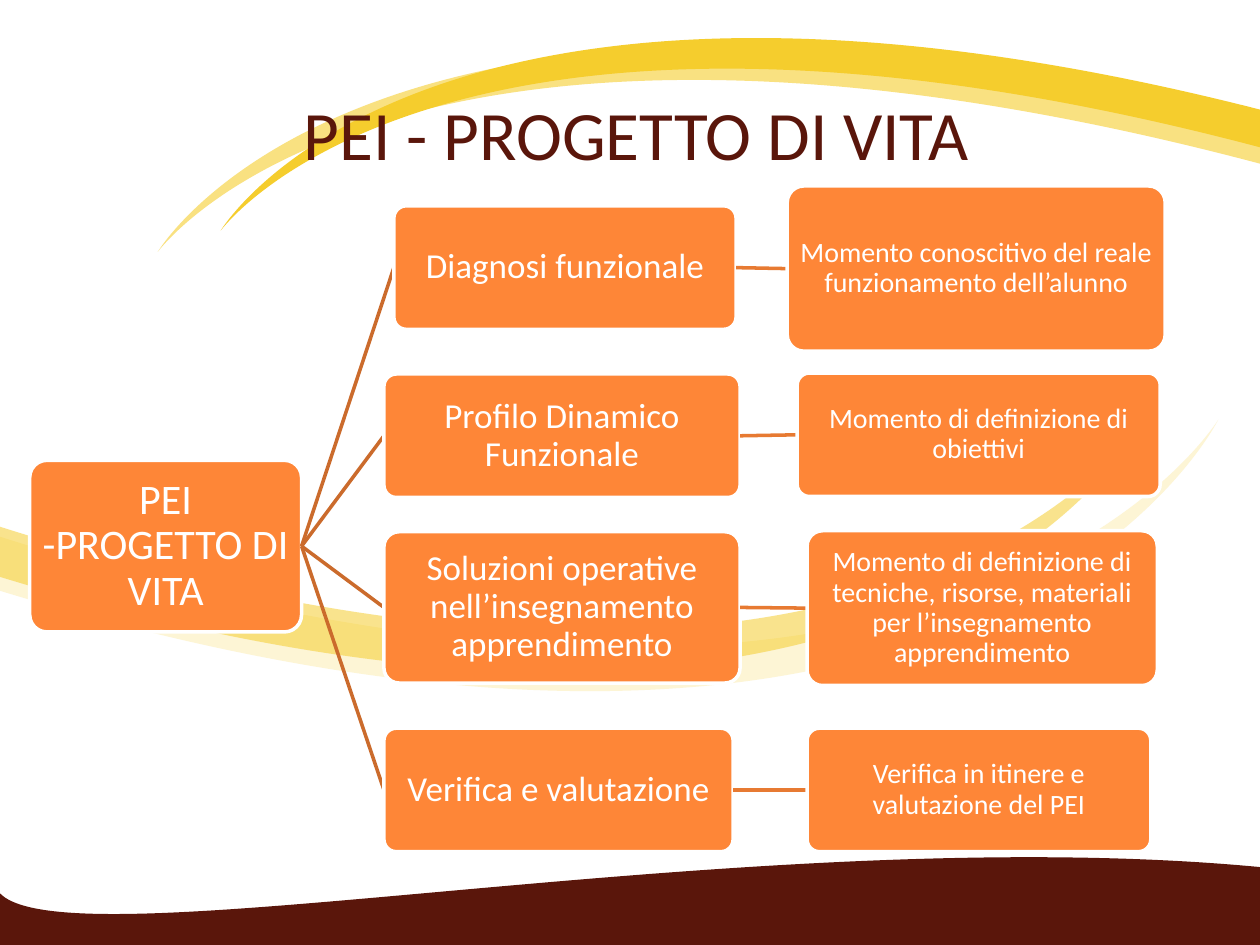
from lxml import etree
from pptx import Presentation
from pptx.dml.color import RGBColor
from pptx.enum.shapes import MSO_CONNECTOR, MSO_SHAPE
from pptx.enum.text import MSO_ANCHOR, PP_ALIGN
from pptx.oxml.ns import qn
from pptx.util import Cm, Pt

STRAIGHT = MSO_CONNECTOR.STRAIGHT
ROUNDED = MSO_SHAPE.ROUNDED_RECTANGLE
CENTER = PP_ALIGN.CENTER
MIDDLE = MSO_ANCHOR.MIDDLE
LEFT_SITE, RIGHT_SITE = 1, 3
TITLE_ONLY = 5
FONT = "Calibri"
COLORS = {
    "brown": "5A160B",
    "cream": "FDF5D5",
    "pale_yellow": "F9E181",
    "yellow": "F5CD2D",
    "orange": "FE8637",
    "branch": "CB6B2C",
    "detail_link": "E77A32",
    "white": "FFFFFF",
}
SLIDE_BOX = (0, 0, 25.4, 19.05)
TITLE_BOX = (1.4, 1.78, 22.86, 1.78)
ROOT_BOX = (0.6, 9.28, 5.48, 3.46)
ROOT_TEXT = "PEI -PROGETTO DI VITA"
STAGES = [
    ("Diagnosi funzionale", (7.94, 4.15, 6.9, 2.49),
     "Momento conoscitivo del reale funzionamento dell’alunno", (15.87, 3.75, 7.62, 3.33)),
    ("Profilo Dinamico Funzionale", (7.74, 7.54, 7.18, 2.49),
     "Momento di definizione di obiettivi", (16.07, 7.52, 7.32, 2.49)),
    ("Soluzioni operative nell’insegnamento apprendimento", (7.74, 10.72, 7.18, 3.05),
     "Momento di definizione di tecniche, risorse, materiali per l’insegnamento apprendimento",
     (16.27, 10.7, 7.06, 3.12)),
    ("Verifica e valutazione", (7.74, 14.68, 7.04, 2.49),
     "Verifica in itinere e valutazione del PEI", (16.27, 14.68, 6.93, 2.49)),
]
RIBBONS = [
    ("cream", (0, 10.82), (19.38, 16.97), (24.56, 8.46), (19.86, 17.98), (0, 11.91)),
    ("pale_yellow", (25.4, 3.3), (7.85, -1.35), (3.18, 5.08), (7.42, -2.11), (25.4, 2.46)),
    ("yellow", (25.4, 2.97), (8.86, -1.4), (4.45, 4.65), (8.46, -2.11), (25.4, 2.21)),
    ("yellow", (0, 10.62), (18.29, 16.41), (23.14, 8.38), (18.72, 17.35), (0, 11.63)),
]


def rgb(name):
    """Return the named colour."""
    return RGBColor.from_string(COLORS[name])


def bend(shape, curve_count):
    """Turn the leading line segments, three at a time, into cubic curves."""
    outline = shape._element.find(".//" + qn("a:path"))
    segments = outline.findall(qn("a:lnTo"))
    for first in range(0, 3 * curve_count, 3):
        curve = etree.Element(qn("a:cubicBezTo"))
        segments[first].addprevious(curve)
        for segment in segments[first:first + 3]:
            curve.append(segment[0])
            outline.remove(segment)


def add_outline(slide, box, points, curve_count, color):
    """Draw a filled outline that starts with the given number of curves."""
    left, top = box[:2]
    corners = [(Cm(left + x), Cm(top + y)) for x, y in points]
    builder = slide.shapes.build_freeform(*corners[0])
    builder.add_line_segments(corners[1:], close=True)
    shape = builder.convert_to_shape()
    bend(shape, curve_count)
    shape.shadow.inherit = False
    shape.fill.solid()
    shape.fill.fore_color.rgb = rgb(color)
    shape.line.fill.background()
    return shape


def add_waves(slide, box):
    """Draw the decorative hill and ribbons."""
    width, height = box[2:]
    hill = [(0, 18.01), (1.42, 19.48), (15.14, 16.51), (width, 17.48),
            (width, height), (0, height)]
    add_outline(slide, box, hill, 1, "brown")
    for color, start, outward, tip, inward, end in RIBBONS:
        points = [start, outward, tip, tip, tip, inward, end]
        ribbon = add_outline(slide, box, points, 2, color)
    solid_color = ribbon._element.spPr.find(qn("a:solidFill"))[0]
    etree.SubElement(solid_color, qn("a:alpha"), val="54000")


def format_text(shape, text, size, color):
    """Set centred text in the slide font."""
    frame = shape.text_frame
    frame.text = text
    frame.word_wrap = True
    frame.vertical_anchor = MIDDLE
    paragraph = frame.paragraphs[0]
    paragraph.alignment = CENTER
    font = paragraph.runs[0].font
    font.name = FONT
    font.size = Pt(size)
    font.color.rgb = rgb(color)
    return paragraph


def add_title(slide, box):
    """Place the title in front of the waves."""
    title = slide.shapes.title
    title.left, title.top, title.width, title.height = map(Cm, box)
    format_text(title, "PEI - PROGETTO DI VITA", 39.6, "brown")
    slide.shapes._spTree.append(title._element)


def add_node(slide, box, text, size, inset=0.03):
    """Draw one rounded box of the tree."""
    node = slide.shapes.add_shape(ROUNDED, *map(Cm, box))
    node.adjustments[0] = 0.1
    node.shadow.inherit = False
    node.fill.solid()
    node.fill.fore_color.rgb = rgb("orange")
    node.line.color.rgb = rgb("white")
    node.line.width = Pt(2)
    frame = node.text_frame
    frame.margin_left = frame.margin_right = Cm(inset)
    frame.margin_top = frame.margin_bottom = Cm(inset)
    format_text(node, text, size, "white").line_spacing = 0.9
    return node


def add_child(slide, parent, box, text, size, color):
    """Draw a box and the line that joins it to its parent."""
    link = slide.shapes.add_connector(STRAIGHT, 0, 0, 0, 0)
    link.line.color.rgb = rgb(color)
    link.line.width = Pt(2)
    etree.SubElement(link._element.spPr, qn("a:effectLst"))
    child = add_node(slide, box, text, size)
    link.begin_connect(parent, RIGHT_SITE)
    link.end_connect(child, LEFT_SITE)
    return child


def add_tree(slide, box):
    """Draw the root, its four stages and their details."""
    def place(node_box):
        """Shift a node box by the corner of the tree."""
        return (box[0] + node_box[0], box[1] + node_box[1], *node_box[2:])

    root = add_node(slide, place(ROOT_BOX), ROOT_TEXT, 24, inset=0.05)
    for stage_text, stage_box, detail_text, detail_box in STAGES:
        stage = add_child(slide, root, place(stage_box), stage_text, 20, "branch")
        add_child(slide, stage, place(detail_box), detail_text, 16, "detail_link")


def main():
    """Build and save the slide."""
    presentation = Presentation()
    presentation.slide_width, presentation.slide_height = map(Cm, SLIDE_BOX[2:])
    slide = presentation.slides.add_slide(presentation.slide_layouts[TITLE_ONLY])
    add_waves(slide, SLIDE_BOX)
    add_title(slide, TITLE_BOX)
    add_tree(slide, SLIDE_BOX)
    presentation.save("out.pptx")


if __name__ == "__main__":
    main()
